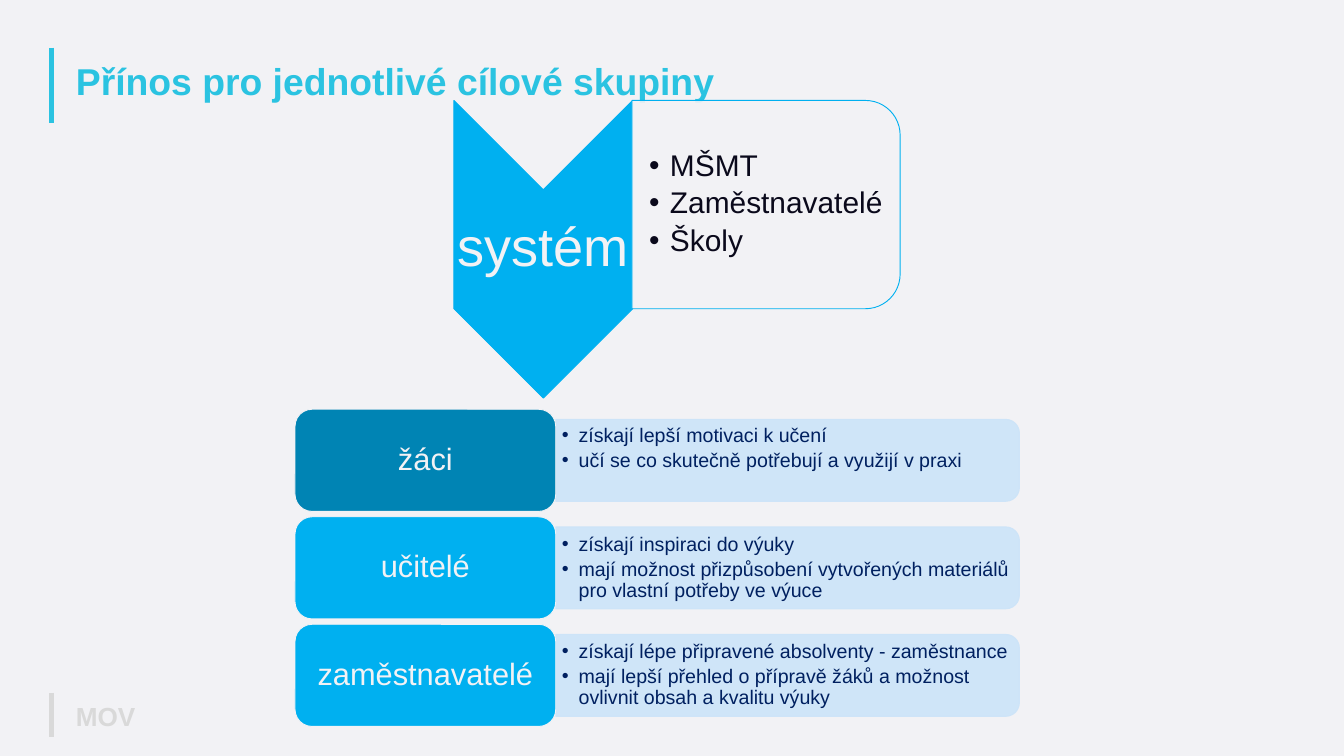
"""Build the slide on benefits for each target group."""
from typing import NamedTuple

from lxml.etree import SubElement
from pptx import Presentation
from pptx.dml.color import RGBColor
from pptx.enum.shapes import MSO_CONNECTOR, MSO_SHAPE as Preset
from pptx.enum.text import MSO_ANCHOR as Anchor, MSO_AUTO_SIZE as AutoSize, PP_ALIGN as Align
from pptx.oxml.ns import qn
from pptx.util import Inches, Pt

COLORS = {
    "page": "F2F2F5", "title": "2BC3E1", "footer": "D9D9D9", "accent": "00B0F0",
    "dark": "0084B4", "panel": "CCE4F9", "ink": "0A091B", "navy": "002060",
}
FONT = "Arial"
ROW_TOP, ROW_STEP = 6.09, 1.6


class Area(NamedTuple):
    left: float
    top: float
    width: float
    height: float

    def lengths(self) -> tuple:
        return tuple(Inches(value) for value in self)


class TextStyle(NamedTuple):
    size: float
    color: str
    bold: bool = False
    align: Align = Align.LEFT
    after: float = 0
    indent: float = 0


class Group(NamedTuple):
    label: str
    fill: str
    benefits: tuple[str, ...]
    bottom: float = 0.04


GROUPS = (
    Group("žáci", "dark", (
        "získají lepší motivaci k učení",
        "učí se co skutečně potřebují a využijí v praxi"), 0.4),
    Group("učitelé", "accent", (
        "získají inspiraci do výuky",
        "mají možnost přizpůsobení vytvořených materiálů pro vlastní potřeby ve výuce")),
    Group("zaměstnavatelé", "accent", (
        "získají lépe připravené absolventy - zaměstnance",
        "mají lepší přehled o přípravě žáků a možnost ovlivnit obsah a kvalitu výuky")),
)
SYSTEM_MEMBERS = ("MŠMT", "Zaměstnavatelé", "Školy")

TITLE = TextStyle(40, "title", bold=True)
FOOTER = TextStyle(28, "footer", bold=True)
SYSTEM = TextStyle(58, "page", align=Align.CENTER)
LABEL = TextStyle(33, "page", align=Align.CENTER)
MEMBERS = TextStyle(32, "ink", after=6, indent=0.31)
BENEFITS = TextStyle(21, "navy", after=4, indent=0.25)


def rgb(name: str) -> RGBColor:
    return RGBColor.from_string(COLORS[name])


def set_all(target, values: dict) -> None:
    for name, value in values.items():
        setattr(target, name, value)


def write(box, lines: tuple[str, ...], style: TextStyle, insets: tuple) -> None:
    """Fill a text frame with lines, bulleted when the style has an indent."""
    frame = box.text_frame
    left, top, right, bottom = (Inches(value) for value in insets)
    set_all(frame, {
        "word_wrap": True, "auto_size": AutoSize.NONE, "vertical_anchor": Anchor.MIDDLE,
        "margin_left": left, "margin_top": top, "margin_right": right, "margin_bottom": bottom,
    })
    for index, line in enumerate(lines):
        para = frame.paragraphs[0] if index == 0 else frame.add_paragraph()
        set_all(para, {"alignment": style.align, "line_spacing": 0.9,
                       "space_before": Pt(0), "space_after": Pt(style.after)})
        if style.indent:
            para.level = 1
            properties = para._p.get_or_add_pPr()
            properties.set("marL", str(Inches(style.indent)))
            properties.set("indent", str(-Inches(style.indent)))
            SubElement(properties, qn("a:buFont"), typeface=FONT)
            SubElement(properties, qn("a:buChar"), char="•")
        span = para.add_run()
        span.text = line
        set_all(span.font, {"name": FONT, "size": Pt(style.size), "bold": style.bold})
        span.font.color.rgb = rgb(style.color)


def add_shape(page, preset: Preset, area: Area, fill: str, line: str,
              rotation: float = 0, opacity: int = 100):
    shape = page.shapes.add_shape(preset, *area.lengths())
    shape.rotation = rotation
    shape.shadow.inherit = False
    shape.fill.solid()
    shape.fill.fore_color.rgb = rgb(fill)
    shape.line.color.rgb = rgb(line)
    shape.line.width = Pt(1)
    if opacity < 100:
        for color in shape.element.spPr.iter(qn("a:srgbClr")):
            if color.get("val") == COLORS[fill]:
                SubElement(color, qn("a:alpha"), val=str(opacity * 1000))
    return shape


def add_bar(page, top: float, bottom: float, color: str) -> None:
    left = Inches(0.77)
    bar = page.shapes.add_connector(
        MSO_CONNECTOR.STRAIGHT, left, Inches(top), left, Inches(bottom))
    bar.line.color.rgb = rgb(color)
    bar.line.width = Pt(5)
    SubElement(bar.element.spPr, qn("a:effectLst"))


def place(box, area: Area) -> None:
    left, top, width, height = area.lengths()
    set_all(box, {"left": left, "top": top, "width": width, "height": height})


def place_list(page, box, area: Area, lines: tuple[str, ...],
               style: TextStyle, insets: tuple) -> None:
    """Put a body placeholder in front of the shapes drawn so far."""
    place(box, area)
    page.shapes.element.append(box.element)
    write(box, lines, style, insets)


def add_group(page, box, group: Group, top: float) -> None:
    add_shape(page, Preset.ROUND_2_SAME_RECTANGLE, Area(11.11, top - 2.69, 1.22, 6.9),
              "panel", "panel", rotation=90, opacity=90)
    place_list(page, box, Area(8.27, top + 0.21, 6.84, 1.1), group.benefits,
               BENEFITS, (0.09, 0.04, 0.09, group.bottom))
    label = add_shape(page, Preset.ROUNDED_RECTANGLE, Area(4.39, top, 3.88, 1.52),
                      group.fill, "page")
    write(label, (group.label,), LABEL, (0.21, 0.14, 0.21, 0.14))


def main() -> None:
    deck = Presentation()
    deck.slide_width, deck.slide_height = Inches(20), Inches(11.25)
    page = deck.slides.add_slide(deck.slide_layouts.get_by_name("Comparison"))
    page.background.fill.solid()
    page.background.fill.fore_color.rgb = rgb("page")
    title, members, *benefit_lists = list(page.placeholders)

    add_bar(page, 0.71, 1.83, "title")
    add_bar(page, 10.31, 10.96, "footer")
    place(title, Area(1.03, 0.88, 18.05, 0.71))
    write(title, ("Přínos pro jednotlivé cílové skupiny",), TITLE, (0.1, 0.05, 0.1, 0.05))
    footer = page.shapes.add_textbox(*Area(1.03, 10.38, 3, 0.6).lengths())
    write(footer, ("MOV",), FOOTER, (0.1, 0.05, 0.1, 0.05))

    add_shape(page, Preset.CHEVRON, Area(5.87, 2.38, 4.43, 2.66),
              "accent", "accent", rotation=90)
    system = page.shapes.add_textbox(*Area(6.75, 2.82, 2.66, 1.77).lengths())
    write(system, ("systém",), SYSTEM, (0.04,) * 4)
    add_shape(page, Preset.ROUND_2_SAME_RECTANGLE, Area(9.85, 1.05, 3.1, 3.99),
              "page", "accent", rotation=90, opacity=90)
    place_list(page, members, Area(9.41, 1.64, 3.83, 2.8), SYSTEM_MEMBERS,
               MEMBERS, (0.25, 0.02, 0.02, 0.02))

    for index, (box, group) in enumerate(zip(benefit_lists, GROUPS)):
        add_group(page, box, group, ROW_TOP + index * ROW_STEP)
    deck.save("out.pptx")


if __name__ == "__main__":
    main()
